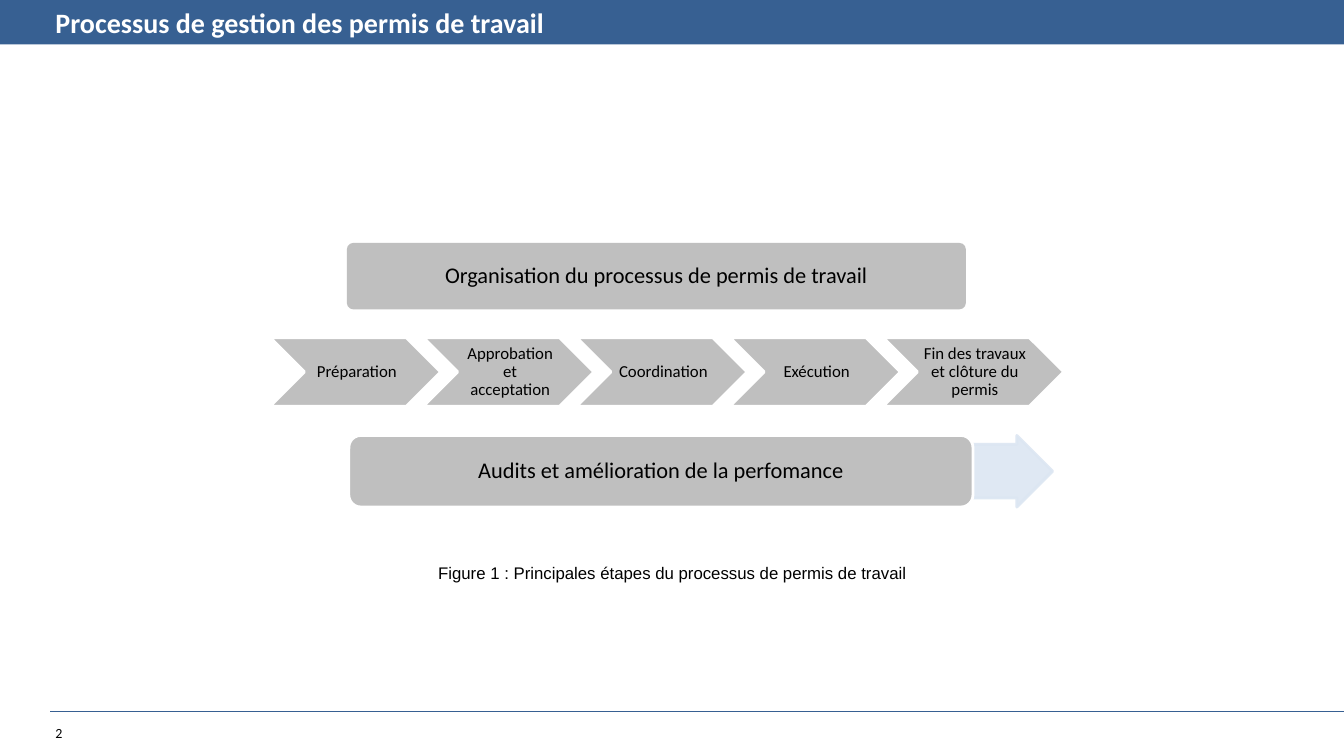
from dataclasses import dataclass

from lxml import etree
from pptx import Presentation
from pptx.dml.color import RGBColor
from pptx.enum.shapes import MSO_CONNECTOR, MSO_SHAPE
from pptx.enum.text import MSO_ANCHOR, MSO_AUTO_SIZE, PP_ALIGN
from pptx.oxml.ns import qn
from pptx.util import Inches, Pt

RECTANGLE = MSO_SHAPE.RECTANGLE
ROUNDED = MSO_SHAPE.ROUNDED_RECTANGLE
CHEVRON = MSO_SHAPE.CHEVRON
RIGHT_ARROW = MSO_SHAPE.RIGHT_ARROW
STRAIGHT = MSO_CONNECTOR.STRAIGHT
LEFT, CENTER = PP_ALIGN.LEFT, PP_ALIGN.CENTER
TOP, MIDDLE = MSO_ANCHOR.TOP, MSO_ANCHOR.MIDDLE
NO_AUTOFIT = MSO_AUTO_SIZE.NONE

COLORS = {
    "band": "376092",
    "step": "BFBFBF",
    "arrow": "DCE6F2",
    "white": "FFFFFF",
    "black": "000000",
}
TITLE_ONLY = 5
STEP_LEFT, STEP_PITCH = 2.68, 1.52


@dataclass
class Box:
    left: float
    top: float
    width: float
    height: float


@dataclass
class TextStyle:
    size: float
    font: str = "Calibri"
    color: str = "black"
    bold: bool = False
    align: PP_ALIGN = CENTER
    anchor: MSO_ANCHOR = MIDDLE
    spacing: float = 1.0
    insets: tuple[float, float, float, float] = (0.1, 0.05, 0.1, 0.05)


@dataclass
class Block:
    box: Box
    preset: MSO_SHAPE
    fill: str
    outline: str | None = None
    adjustments: tuple[float, ...] = ()
    label: str = ""
    style: TextStyle | None = None


def rgb(name: str) -> RGBColor:
    return RGBColor.from_string(COLORS[name])


def place(shape, box: Box) -> None:
    shape.left, shape.top = Inches(box.left), Inches(box.top)
    shape.width, shape.height = Inches(box.width), Inches(box.height)


def write(shape, text: str, style: TextStyle) -> None:
    frame = shape.text_frame
    frame.text = text
    frame.word_wrap = True
    frame.auto_size = NO_AUTOFIT
    frame.vertical_anchor = style.anchor
    (frame.margin_left, frame.margin_top,
     frame.margin_right, frame.margin_bottom) = map(Inches, style.insets)
    paragraph = frame.paragraphs[0]
    paragraph.alignment = style.align
    paragraph.line_spacing = style.spacing
    font = paragraph.runs[0].font
    font.name, font.size, font.bold = style.font, Pt(style.size), style.bold
    font.color.rgb = rgb(style.color)


def draw_block(slide, block: Block):
    box = block.box
    shape = slide.shapes.add_shape(
        block.preset, Inches(box.left), Inches(box.top),
        Inches(box.width), Inches(box.height))
    shape.shadow.inherit = False
    shape.fill.solid()
    shape.fill.fore_color.rgb = rgb(block.fill)
    if block.outline:
        shape.line.color.rgb = rgb(block.outline)
        shape.line.width = Pt(2)
    else:
        shape.line.fill.background()
    for index, value in enumerate(block.adjustments):
        shape.adjustments[index] = value
    if block.style:
        write(shape, block.label, block.style)
    return shape


def draw_text(slide, box: Box, text: str, style: TextStyle) -> None:
    shape = slide.shapes.add_textbox(0, 0, 0, 0)
    place(shape, box)
    write(shape, text, style)


def set_opacity(shape, percent: int) -> None:
    for color in shape.element.spPr.iter(qn("a:srgbClr")):
        etree.SubElement(color, qn("a:alpha"), val=str(percent * 1000))


def draw_footer(slide) -> None:
    rule = slide.shapes.add_connector(
        STRAIGHT, Inches(0.5), Inches(7.06), Inches(13.33), Inches(7.06))
    rule.line.color.rgb = rgb("band")
    rule.line.width = Pt(0.75)
    etree.SubElement(rule.element.spPr, qn("a:effectLst"))
    draw_text(slide, Box(0.45, 7.14, 0.71, 0.27), "2",
              TextStyle(10, align=LEFT, anchor=TOP))


def draw_header(slide) -> None:
    draw_block(slide, Block(Box(0, 0, 13.33, 0.44), RECTANGLE, "band"))
    title = slide.shapes.title
    slide.shapes.element.append(title.element)
    place(title, Box(0.45, 0, 7.72, 0.44))
    write(title, "Processus de gestion des permis de travail",
          TextStyle(20, color="white", bold=True, align=LEFT))


def draw_process(slide) -> None:
    organisation_style = TextStyle(16, spacing=0.9, insets=(0.01,) * 4)
    step_style = TextStyle(12, spacing=0.9, insets=(0.05, 0.02, 0.02, 0.02))
    audit_style = TextStyle(16, spacing=0.9, insets=(0.07, 0.03, 0.07, 0.03))
    steps = [
        ("Préparation", 1.69),
        ("Approbation et acceptation", 1.69),
        ("Coordination", 1.69),
        ("Exécution", 1.69),
        ("Fin des travaux et clôture du permis", 1.79),
    ]
    draw_block(slide, Block(
        Box(3.44, 2.41, 6.14, 0.66), ROUNDED, "step", adjustments=(0.1,),
        label="Organisation du processus de permis de travail",
        style=organisation_style))
    for index, (label, width) in enumerate(steps):
        box = Box(STEP_LEFT + index * STEP_PITCH, 3.35, width, 0.68)
        draw_block(slide, Block(box, CHEVRON, "step", "white",
                                label=label, style=step_style))
    arrow = draw_block(slide, Block(
        Box(9.56, 4.32, 0.88, 0.71), RIGHT_ARROW, "arrow", "arrow", (0.75, 0.5)))
    set_opacity(arrow, 90)
    draw_block(slide, Block(
        Box(3.46, 4.32, 6.19, 0.71), ROUNDED, "step", "white",
        label="Audits et amélioration de la perfomance", style=audit_style))


def main() -> None:
    presentation = Presentation()
    presentation.slide_width = Inches(13.33)
    presentation.slide_height = Inches(7.5)
    slide = presentation.slides.add_slide(presentation.slide_layouts[TITLE_ONLY])
    draw_footer(slide)
    draw_header(slide)
    draw_process(slide)
    draw_text(slide, Box(2.98, 5.5, 7.38, 0.31),
              "Figure 1 : Principales étapes du processus de permis de travail",
              TextStyle(12, font="Arial", anchor=TOP, spacing=1.15))
    presentation.save("out.pptx")


if __name__ == "__main__":
    main()
